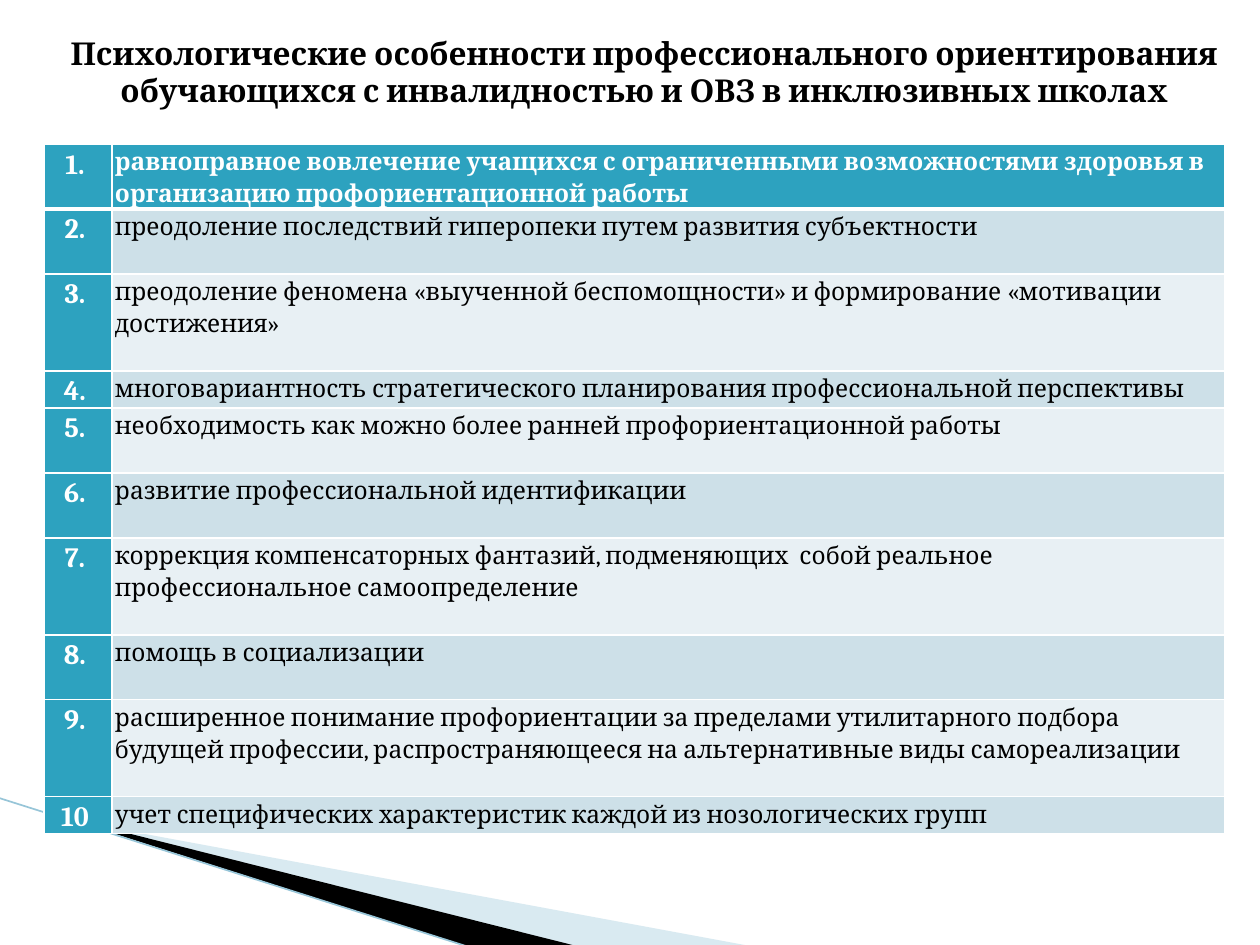
import pptx
import pptx.util
import pptx.dml.color
import pptx.enum.shapes
import pptx.enum.text
import pptx.oxml
from dataclasses import dataclass
from pptx.oxml.ns import qn

EMU_PER_PX = 914400 / 126
ALIGN = pptx.enum.text.PP_ALIGN
ANCHOR = pptx.enum.text.MSO_ANCHOR


@dataclass(frozen=True)
class Theme:
    font: str = "Cambria"
    title_size: int = 18
    number_size: int = 16
    body_size: int = 14
    dark: str = "000000"
    light: str = "FFFFFF"
    accent: str = "2DA2BF"
    bands: tuple = ("E8F0F4", "CDE0E8")
    wedge: str = "A0CBDC"
    edge: str = "97C5D8"


def px(value):
    return pptx.util.Emu(round(value * EMU_PER_PX))


def rgb(value):
    return pptx.dml.color.RGBColor.from_string(value)


def set_attributes(target, values):
    for name, value in values.items():
        setattr(target, name, value)


def box(left, top, width, height):
    return {"left": px(left), "top": px(top), "width": px(width), "height": px(height)}


class SlideBuilder:
    def __init__(self, slide, theme):
        self.slide = slide
        self.theme = theme

    def set_text(self, text_frame, text, size, color, bold, align, line_spacing=1.0):
        paragraph = text_frame.paragraphs[0]
        set_attributes(paragraph, {"text": text, "alignment": align, "line_spacing": line_spacing,
                                   "space_before": pptx.util.Pt(0)})
        font = paragraph.runs[0].font
        set_attributes(font, {"name": self.theme.font, "size": pptx.util.Pt(size), "bold": bold})
        font.color.rgb = rgb(color)

    def title(self, text, area):
        shape = self.slide.shapes.title
        set_attributes(shape, box(*area))
        set_attributes(shape.text_frame, {"word_wrap": True, "vertical_anchor": ANCHOR.MIDDLE,
                                          "auto_size": pptx.enum.text.MSO_AUTO_SIZE.NONE})
        self.set_text(shape.text_frame, text, self.theme.title_size, self.theme.dark, True,
                      ALIGN.CENTER)

    def wedge(self, points, color, opacity=100):
        builder = self.slide.shapes.build_freeform(*points[0], scale=EMU_PER_PX)
        builder.add_line_segments(points[1:], close=True)
        shape = builder.convert_to_shape()
        shape.shadow.inherit = False
        shape.line.fill.background()
        shape.fill.solid()
        shape.fill.fore_color.rgb = rgb(color)
        if opacity < 100:
            color_element = shape._element.spPr.find(qn("a:solidFill")).find(qn("a:srgbClr"))
            alpha = color_element.makeelement(qn("a:alpha"), {"val": str(opacity * 1000)})
            color_element.append(alpha)

    def line(self, start, end, color, width):
        connector = self.slide.shapes.add_connector(
            pptx.enum.shapes.MSO_CONNECTOR.STRAIGHT, *map(px, start + end))
        connector.line.color.rgb = rgb(color)
        connector.line.width = pptx.util.Pt(width)
        properties = connector._element.spPr
        properties.append(properties.makeelement(qn("a:effectLst"), {}))

    def cell_borders(self, cell, bottom_width):
        properties = cell._tc.get_or_add_tcPr()
        widths = {"lnL": 1, "lnR": 1, "lnT": 1, "lnB": bottom_width}
        for index, (tag, width) in enumerate(widths.items()):
            properties.insert(index, pptx.oxml.parse_xml(
                f'<a:{tag} xmlns:a="http://schemas.openxmlformats.org/drawingml/2006/main" '
                f'w="{width * 12700}"><a:solidFill><a:srgbClr val="{self.theme.light}"/>'
                f'</a:solidFill></a:{tag}>'))

    def cell(self, cell, text, size, color, bold, align, fill, bottom_width):
        set_attributes(cell, {"margin_left": px(3), "margin_right": px(3),
                              "margin_top": 0, "margin_bottom": 0})
        cell.fill.solid()
        cell.fill.fore_color.rgb = rgb(fill)
        self.set_text(cell.text_frame, text, size, color, bold, align, 1.15)
        self.cell_borders(cell, bottom_width)

    def numbered_table(self, rows, left, top, columns):
        """Rows are (text, height) pairs; the first one is the header."""
        theme = self.theme
        height = sum(row_height for _, row_height in rows)
        area = box(left, top, sum(columns), height)
        table = self.slide.shapes.add_table(len(rows), len(columns), **area).table
        for column, width in zip(table.columns, columns):
            column.width = px(width)
        for index, (text, row_height) in enumerate(rows):
            table.rows[index].height = px(row_height)
            header = index == 0
            number = f"{index + 1}" + ("." if index < 9 else "") + "\N{NO-BREAK SPACE}"
            bottom_width = 3 if header else 1
            self.cell(table.cell(index, 0), number, theme.number_size, theme.light, True,
                      ALIGN.CENTER, theme.accent, bottom_width)
            self.cell(table.cell(index, 1), text, theme.body_size,
                      theme.light if header else theme.dark, header, ALIGN.LEFT,
                      theme.accent if header else theme.bands[index % 2], bottom_width)


ROWS = [
    ("равноправное вовлечение учащихся с ограниченными возможностями здоровья в "
     "организацию профориентационной работы", 64),
    ("преодоление последствий гиперопеки путем развития субъектности", 65),
    ("преодоление феномена «выученной беспомощности» и формирование «мотивации достижения»", 97),
    ("многовариантность стратегического планирования профессиональной перспективы", 37),
    ("необходимость как можно более ранней профориентационной работы", 65),
    ("развитие профессиональной идентификации", 65),
    ("коррекция компенсаторных фантазий, подменяющих  собой реальное "
     "профессиональное самоопределение", 97),
    ("помощь в социализации", 65),
    ("расширенное понимание профориентации за пределами утилитарного подбора "
     "будущей профессии, распространяющееся на альтернативные виды самореализации", 97),
    ("учет специфических характеристик каждой из нозологических групп", 37),
]


def main():
    presentation = pptx.Presentation()
    set_attributes(presentation, {"slide_width": px(1260), "slide_height": px(945)})
    theme = Theme()
    builder = SlideBuilder(presentation.slides.add_slide(presentation.slide_layouts[5]), theme)

    builder.wedge([(69, 820), (750, 946), (575, 946), (69, 819)], theme.wedge, opacity=40)
    builder.wedge([(67, 818), (576, 946), (469, 947), (68, 819)], theme.dark)
    builder.line((-1, 798), (469, 947), theme.edge, 0.95)
    builder.numbered_table(ROWS, left=44, top=144, columns=(68, 1113))
    builder.title("Психологические особенности профессионального ориентирования "
                  "обучающихся с инвалидностью и ОВЗ в инклюзивных школах", (29, 27, 1231, 89))
    presentation.save("out.pptx")


if __name__ == "__main__":
    main()
